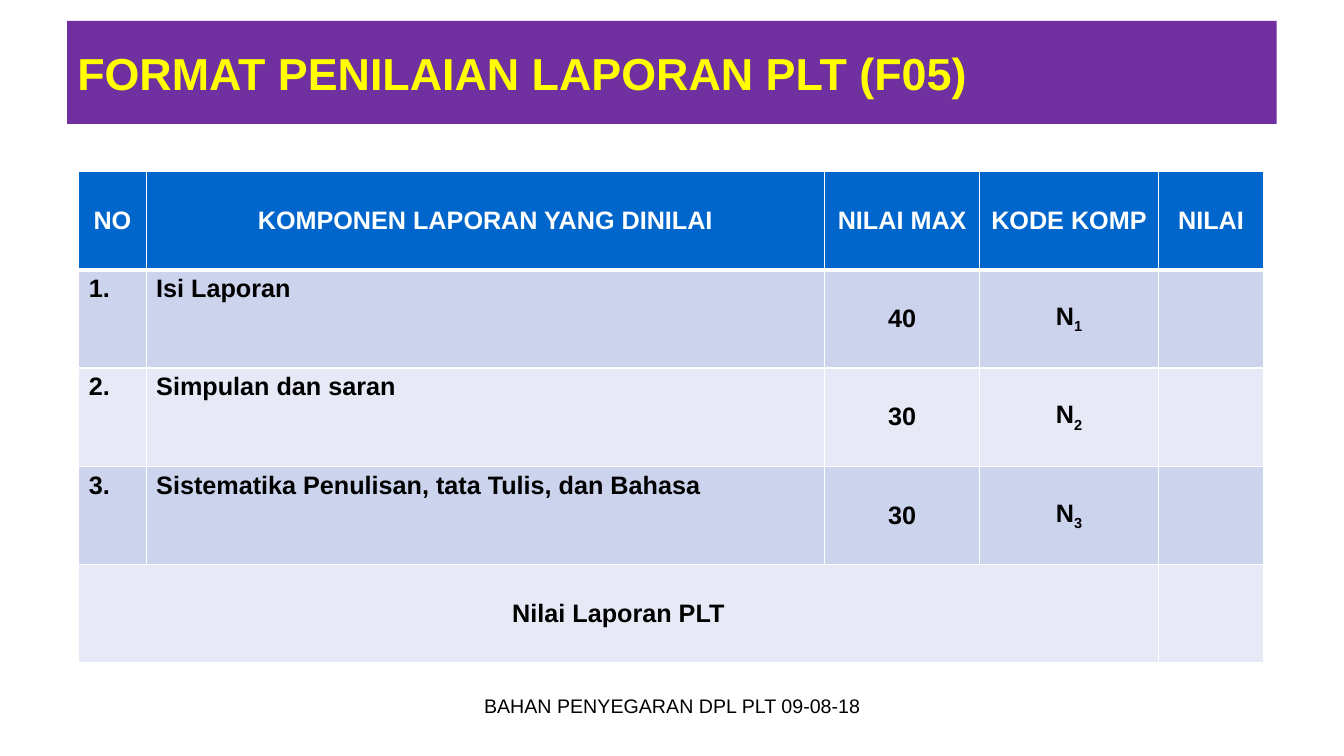
import pptx
import pptx.util
import pptx.dml.color
import pptx.enum.text
import pptx.oxml
import pptx.oxml.ns
from lxml import etree

Pt = pptx.util.Pt
ALIGN = pptx.enum.text.PP_ALIGN
ANCHOR = pptx.enum.text.MSO_ANCHOR

# Content
TITLE = "FORMAT PENILAIAN LAPORAN PLT (F05)"
FOOTER = "BAHAN PENYEGARAN DPL PLT 09-08-18"
HEADERS = ["NO", "KOMPONEN LAPORAN YANG DINILAI", "NILAI MAX", "KODE KOMP", "NILAI"]
COMPONENTS = [("Isi Laporan", 40), ("Simpulan dan saran", 30),
              ("Sistematika Penulisan, tata Tulis, dan Bahasa", 30)]
TOTAL = "Nilai Laporan PLT"

# Style and layout
COLORS = {"banner": "7030A0", "title": "FFFF00", "header": "0066CC", "odd": "CCD3EC",
          "even": "E7EAF6", "text": "000000", "white": "FFFFFF"}
FONT = "Arial"
COLUMN_WIDTHS = [48.2, 484.6, 110.9, 127.4, 75.6]
ROW_HEIGHT = 70.27


def color(name):
    return pptx.dml.color.RGBColor.from_string(COLORS[name])


def write(frame, text, size=18, ink="text", bold=True, align=ALIGN.LEFT,
          anchor=ANCHOR.TOP, subscript=""):
    frame.vertical_anchor = anchor
    holder = frame.text_frame if hasattr(frame, "text_frame") else frame
    para = holder.paragraphs[0]
    para.alignment = align
    for part in filter(None, (text, subscript)):
        span = para.add_run()
        span.text = part
        span.font.name = FONT
        span.font.size = Pt(size)
        span.font.bold = bold
        span.font.color.rgb = color(ink)
    if subscript:
        span.font._element.set("baseline", "-25000")


def style_cell(cell, fill, top=1, bottom=1):
    properties = cell._tc.get_or_add_tcPr()
    for side, width in (("lnL", 1), ("lnR", 1), ("lnT", top), ("lnB", bottom)):
        line = etree.SubElement(properties, pptx.oxml.ns.qn("a:" + side), w=str(Pt(width)))
        paint = etree.SubElement(line, pptx.oxml.ns.qn("a:solidFill"))
        etree.SubElement(paint, pptx.oxml.ns.qn("a:srgbClr"), val=COLORS["white"])
    cell.fill.solid()
    cell.fill.fore_color.rgb = color(fill)


deck = pptx.Presentation()
deck.slide_width, deck.slide_height = Pt(960), Pt(540)
page = deck.slides.add_slide(deck.slide_layouts[5])

# Title banner
banner = page.shapes.title
banner.left, banner.top, banner.width, banner.height = Pt(48), Pt(15), Pt(864), Pt(73.5)
banner.fill.solid()
banner.fill.fore_color.rgb = color("banner")
banner.text_frame.auto_size = pptx.enum.text.MSO_AUTO_SIZE.NONE
write(banner.text_frame, TITLE, size=32, ink="title", anchor=ANCHOR.MIDDLE)

# Assessment table
row_count = len(COMPONENTS) + 2
table = page.shapes.add_table(row_count, len(HEADERS), Pt(56.2), Pt(122.4),
                              Pt(sum(COLUMN_WIDTHS)), Pt(ROW_HEIGHT * row_count)).table
for column, width in zip(table.columns, COLUMN_WIDTHS):
    column.width = Pt(width)
for number, row in enumerate(table.rows):
    row.height = Pt(ROW_HEIGHT)
    fill = "header" if number == 0 else "odd" if number % 2 else "even"
    for cell in row.cells:
        style_cell(cell, fill, top=3 if number == 1 else 1, bottom=3 if number == 0 else 1)

centred = {"align": ALIGN.CENTER, "anchor": ANCHOR.MIDDLE}
for index, header in enumerate(HEADERS):
    write(table.cell(0, index), header, ink="white", **centred)
for number, (component, maximum) in enumerate(COMPONENTS, start=1):
    write(table.cell(number, 0), f"{number}.")
    write(table.cell(number, 1), component)
    write(table.cell(number, 2), str(maximum), **centred)
    write(table.cell(number, 3), "N", subscript=str(number), **centred)

# Total row
total = table.cell(row_count - 1, 0)
total.merge(table.cell(row_count - 1, len(HEADERS) - 2))
write(total, TOTAL, **centred)

# Footer
footer = page.shapes.add_textbox(Pt(328.3), Pt(491.8), Pt(303.8), Pt(37.4))
footer.text_frame.word_wrap = True
write(footer.text_frame, FOOTER, size=14, bold=False, align=ALIGN.CENTER)

deck.save("out.pptx")
